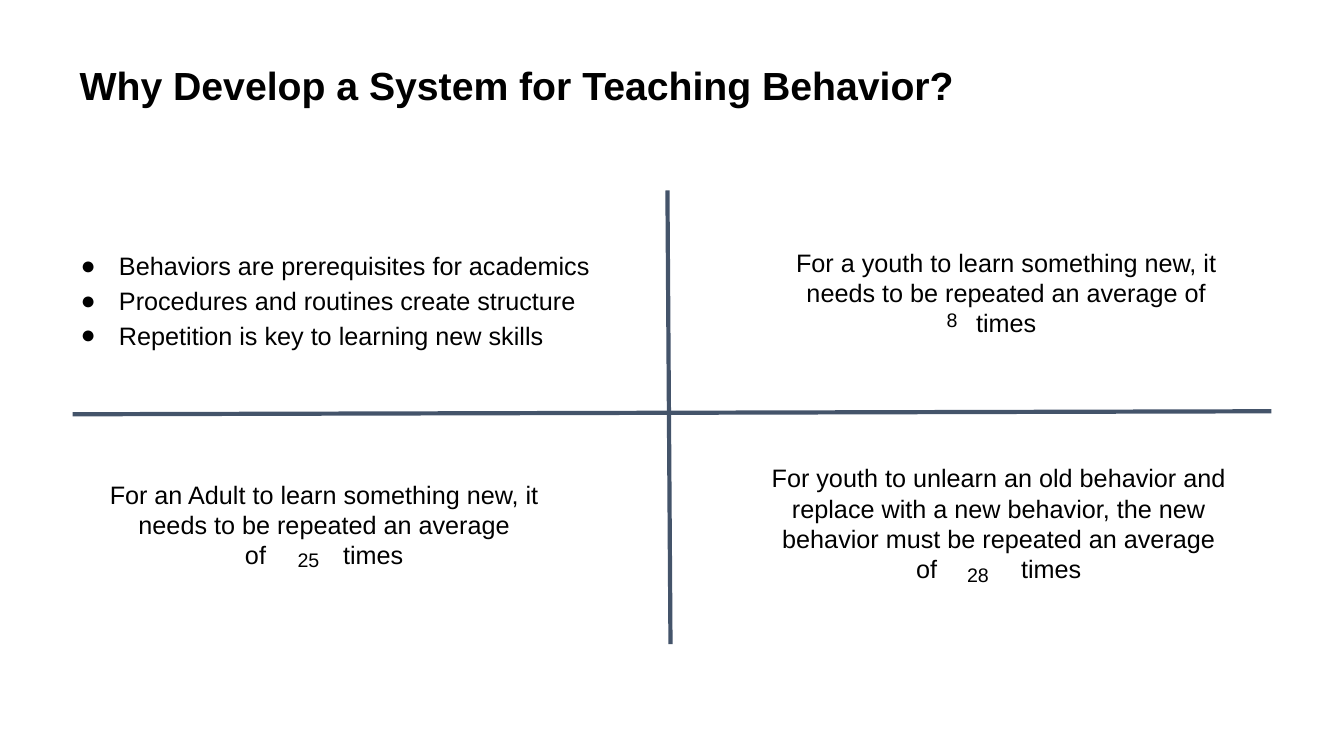
from lxml import etree
from pptx import Presentation
from pptx import util as u
from pptx.dml.color import RGBColor
from pptx.enum import shapes, text
from pptx.oxml.ns import qn

COLORS = {"ink": "000000", "rule": "44546A"}
GAP = "{gap}"


def rgb(name):
    return RGBColor.from_string(COLORS[name])


def add_run(p, content, size, bold):
    r = p.add_run()
    r.text = content
    r.font.name = "Arial"
    r.font.size = u.Pt(size)
    r.font.bold = bold
    r.font.color.rgb = rgb("ink")
    return r


def write(sp, box, lines, size=18, bold=False, align="CENTER", gap=0,
          pad=0.1, fit=True):
    sp.left, sp.top, sp.width, sp.height = [u.Inches(v) for v in box]
    tf = sp.text_frame
    tf.word_wrap = True
    tf.auto_size = (text.MSO_AUTO_SIZE.SHAPE_TO_FIT_TEXT if fit
                    else text.MSO_AUTO_SIZE.NONE)
    tf.vertical_anchor = text.MSO_ANCHOR.TOP
    tf.margin_left = tf.margin_right = u.Inches(0.1)
    tf.margin_top = tf.margin_bottom = u.Inches(pad)
    for i, line in enumerate(lines):
        p = tf.paragraphs[0] if i == 0 else tf.add_paragraph()
        p.alignment = getattr(text.PP_ALIGN, align)
        p.space_before = u.Pt(0)
        before, mark, after = line.partition(GAP)
        add_run(p, before, size, bold)
        if mark:
            space = add_run(p, " ", size, bold)
            space.font._element.set("spc", str(gap * 100))
            add_run(p, after, size, bold)
    return tf


def add_text(s, box, lines, **fmt):
    sp = s.shapes.add_textbox(*[u.Inches(v) for v in box])
    return write(sp, box, lines, **fmt)


def add_bullets(tf):
    for p in tf.paragraphs:
        p.line_spacing = 1.15
        pPr = p._p.get_or_add_pPr()
        pPr.set("marL", str(u.Inches(0.5)))
        pPr.set("indent", str(u.Inches(-0.38)))
        color = etree.SubElement(pPr, qn("a:buClr"))
        etree.SubElement(color, qn("a:srgbClr"), val=COLORS["ink"])
        etree.SubElement(pPr, qn("a:buFont"), typeface="Arial")
        etree.SubElement(pPr, qn("a:buChar"), char="●")
    tf.paragraphs[0].space_before = u.Pt(12)


def add_rule(s, *ends):
    line = s.shapes.add_connector(shapes.MSO_CONNECTOR.STRAIGHT,
                                  *[u.Inches(v) for v in ends])
    line.line.color.rgb = rgb("rule")
    line.line.width = u.Pt(3)
    etree.SubElement(line._element.spPr, qn("a:effectLst"))


def main():
    prs = Presentation()
    prs.slide_width, prs.slide_height = u.Inches(13.33), u.Inches(7.5)
    s = prs.slides.add_slide(prs.slide_layouts[1])

    write(s.shapes.title, (0.69, 0.51, 11.06, 0.67),
          ["Why Develop a System for Teaching Behavior?"],
          size=28, bold=True, align="LEFT")
    add_bullets(write(s.placeholders[1], (0.58, 2.34, 5.89, 1.2),
                      ["Behaviors are prerequisites for academics",
                       "Procedures and routines create structure",
                       "Repetition is key to learning new skills"],
                      align="LEFT"))

    add_text(s, (7.45, 2.35, 5.06, 1.11),
             ["For a youth to learn something new, it needs to be repeated "
              "an average of" + GAP + "times"], gap=20)
    add_text(s, (0.81, 4.65, 4.81, 1.11),
             ["For an Adult to learn something new, it needs to be repeated "
              "an average", "of" + GAP + "times"], gap=50)
    add_text(s, (7.43, 4.49, 4.95, 1.41),
             ["For youth to unlearn an old behavior and replace with a new "
              "behavior, the new behavior must be repeated an average",
              "of" + GAP + "times"], gap=55)

    for count, left, top, width in [("8", 9.29, 3.01, 0.3),
                                    ("25", 2.76, 5.39, 0.6),
                                    ("28", 9.4, 5.54, 0.6)]:
        add_text(s, (left, top, width, 0.37), [count], size=14, pad=0.05,
                 fit=False)

    add_rule(s, 6.62, 1.89, 6.65, 6.39)
    add_rule(s, 12.61, 4.08, 0.72, 4.11)
    prs.save("out.pptx")


if __name__ == "__main__":
    main()
